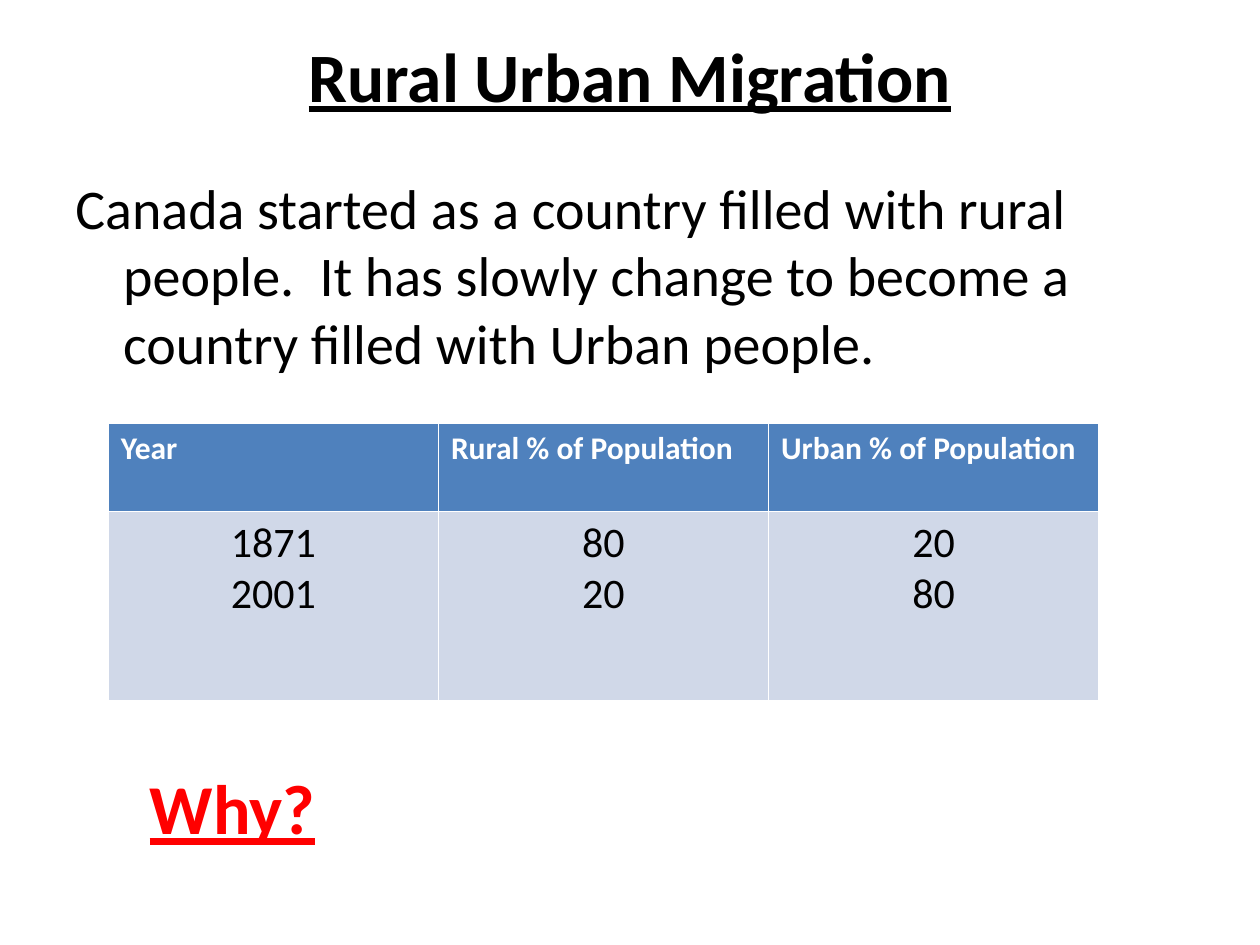
from dataclasses import dataclass

from pptx import Presentation
from pptx import util as u
from pptx.dml.color import RGBColor
from pptx.enum import text as t

FONT = "Calibri"
COLORS = {
    "ink": "000000",
    "paper": "FFFFFF",
    "head": "4F81BD",
    "band": "D0D8E8",
    "alert": "FF0000",
}


@dataclass
class Box:
    left: float
    top: float
    width: float
    height: float

    def emu(self) -> list:
        return [u.Inches(n) for n in (self.left, self.top, self.width, self.height)]


def rgb(name: str) -> RGBColor:
    return RGBColor.from_string(COLORS[name])


def write(frame, words: str, *, size: float, color: str = "ink", bold: bool = False,
          line: bool = False, align=t.PP_ALIGN.LEFT, hang: float = 0) -> None:
    """Fill a text frame, one paragraph for each line of words."""
    frame.text = words
    for para in frame.paragraphs:
        para.alignment = align
        if hang:
            props = para._p.get_or_add_pPr()
            props.set("marL", str(u.Inches(hang)))
            props.set("indent", str(-u.Inches(hang)))
        for run in para.runs:
            font = run.font
            font.name, font.size = FONT, u.Pt(size)
            font.bold, font.underline = bold, line
            font.color.rgb = rgb(color)


def add_text(slide, box: Box, words: str, *, wrap: bool = True, **style):
    frame = slide.shapes.add_textbox(*box.emu()).text_frame
    frame.word_wrap = wrap
    write(frame, words, **style)
    return frame


def add_grid(slide, box: Box, rows: list, highs: list) -> None:
    """Draw a header row over a centred body row."""
    grid = slide.shapes.add_table(len(rows), len(rows[0]), *box.emu()).table
    looks = [
        ("head", dict(size=18, color="paper", bold=True)),
        ("band", dict(size=24, align=t.PP_ALIGN.CENTER)),
    ]
    for r, (row, high, (fill, style)) in enumerate(zip(rows, highs, looks)):
        grid.rows[r].height = u.Inches(high)
        for c, words in enumerate(row):
            cell = grid.cell(r, c)
            cell.fill.solid()
            cell.fill.fore_color.rgb = rgb(fill)
            write(cell.text_frame, words, **style)


def main() -> None:
    deck = Presentation()
    deck.slide_width, deck.slide_height = u.Inches(10), u.Inches(7.5)
    slide = deck.slides.add_slide(deck.slide_layouts[6])

    # Title, lifted above the middle of its box
    title = add_text(slide, Box(0.5, 0.3, 9, 1.25), "Rural Urban Migration",
                     size=39.6, bold=True, line=True, align=t.PP_ALIGN.CENTER)
    title.vertical_anchor = t.MSO_ANCHOR.MIDDLE
    title.margin_bottom = u.Inches(0.72)

    # Introduction
    add_text(slide, Box(0.5, 1.33, 9, 2.11),
             "Canada started as a country filled with rural people.  "
             "It has slowly change to become a country filled with Urban people.",
             size=32, hang=0.38)

    # Population table
    add_grid(slide, Box(0.86, 3.36, 7.86, 2.2), [
        ["Year", "Rural % of Population", "Urban % of Population"],
        ["1871\n2001", "80\n20", "20\n80"],
    ], [0.7, 1.5])

    # Question
    add_text(slide, Box(1.09, 6.02, 1.53, 0.77), "Why?", wrap=False,
             size=40, color="alert", bold=True, line=True)

    deck.save("out.pptx")


if __name__ == "__main__":
    main()
